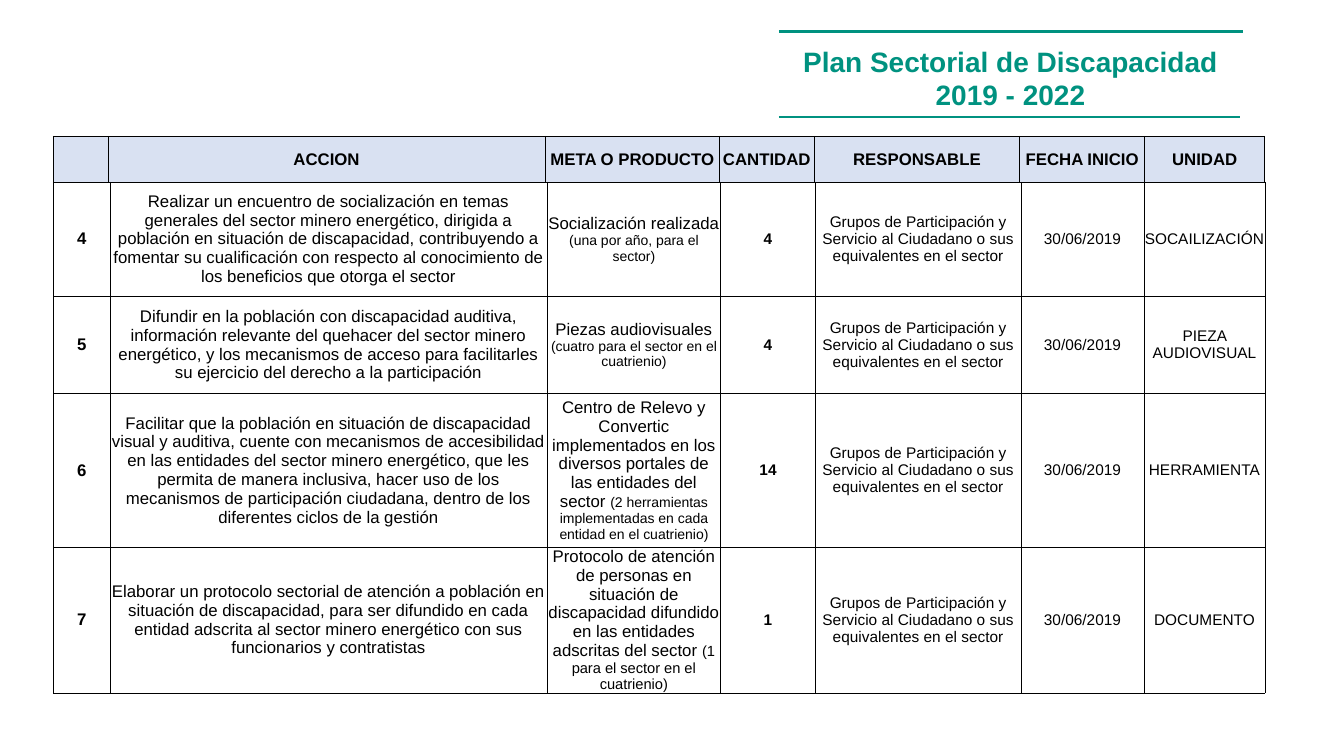
from lxml import etree
from pptx import Presentation
from pptx import util as u
from pptx.dml.color import RGBColor
from pptx.enum import shapes, text
from pptx.oxml import ns

BLACK, GREEN, HEADER_FILL = "000000", "009280", "D9E1F2"
RESPONSIBLE = ("Grupos de Participación y Servicio al Ciudadano o sus "
               "equivalentes en el sector")
START_DATE = "30/06/2019"
HEADINGS = ["", "ACCION", "META O PRODUCTO", "CANTIDAD", "RESPONSABLE",
            "FECHA INICIO", "UNIDAD"]
HEADER_WIDTHS = [1.37, 11.02, 4.39, 2.39, 5.18, 3.15, 3.02]
BODY_WIDTHS = [1.42, 11.02, 4.37, 2.39, 5.18, 3.1, 3.05]
BODY_HEIGHTS = [2.87, 2.46, 3.86, 3.68]

ACTIONS = [
    ("4", "Realizar un encuentro de socialización en temas generales del sector "
          "minero energético, dirigida a población en situación de discapacidad, "
          "contribuyendo a fomentar su cualificación con respecto al conocimiento "
          "de los beneficios que otorga el sector",
     [[("Socialización realizada", 12)], [("(una por año, para el sector)", 10)]],
     "4", "SOCAILIZACIÓN"),
    ("5", "Difundir en la población con discapacidad auditiva, información "
          "relevante del quehacer del sector minero energético, y los mecanismos "
          "de acceso para facilitarles su ejercicio del derecho a la participación",
     [[("Piezas audiovisuales", 12)],
      [("(cuatro para el sector en el cuatrienio)", 10)]],
     "4", "PIEZA AUDIOVISUAL"),
    ("6", "Facilitar que la población en situación de discapacidad visual y "
          "auditiva, cuente con mecanismos de accesibilidad en las entidades del "
          "sector minero energético, que les permita de manera inclusiva, hacer "
          "uso de los mecanismos de participación ciudadana, dentro de los "
          "diferentes ciclos de la gestión",
     [[("Centro de Relevo y Convertic implementados en los diversos portales de "
        "las entidades del sector ", 12),
       ("(2 herramientas implementadas en cada entidad en el cuatrienio)", 10)]],
     "14", "HERRAMIENTA"),
    ("7", "Elaborar un protocolo sectorial de atención a población en situación "
          "de discapacidad, para ser difundido en cada entidad adscrita al sector "
          "minero energético con sus funcionarios y contratistas",
     [[("Protocolo de atención de personas en situación de discapacidad "
        "difundido en las entidades adscritas del sector ", 12),
       ("(1 para el sector en el cuatrienio)", 10.5)]],
     "1", "DOCUMENTO"),
]


def color(code):
    return RGBColor.from_string(code)


def line_of(content, size, bold=False):
    return [[(content, size, bold)]]


class PlanSlide:
    """Holds the slide and its style, and adds each kind of element."""

    font = "Arial"

    def __init__(self, deck):
        self.slide = deck.slides.add_slide(deck.slide_layouts[5])

    def add_text(self, frame, paragraphs, ink):
        for index, pieces in enumerate(paragraphs):
            paragraph = frame.paragraphs[0] if index == 0 else frame.add_paragraph()
            paragraph.alignment = text.PP_ALIGN.CENTER
            for content, size, bold in pieces:
                run = paragraph.add_run()
                run.text = content
                run.font.name, run.font.size, run.font.bold = self.font, u.Pt(size), bold
                run.font.color.rgb = color(ink)

    def title(self, lines, left, top, width, height):
        heading = self.slide.shapes.title
        heading.left, heading.top = u.Cm(left), u.Cm(top)
        heading.width, heading.height = u.Cm(width), u.Cm(height)
        frame = heading.text_frame
        frame.word_wrap = False
        frame.auto_size = text.MSO_AUTO_SIZE.NONE
        frame.vertical_anchor = text.MSO_ANCHOR.TOP
        self.add_text(frame, [[(line, 20, True)] for line in lines], GREEN)

    def rule(self, left, right, y):
        rule = self.slide.shapes.add_connector(
            shapes.MSO_CONNECTOR.STRAIGHT, u.Cm(left), u.Cm(y), u.Cm(right), u.Cm(y))
        rule.line.color.rgb = color(GREEN)
        rule.line.width = u.Pt(2)
        etree.SubElement(rule.element.spPr, ns.qn("a:effectLst"))

    def border(self, cell, side, points):
        properties = cell._tc.get_or_add_tcPr()
        edge = etree.SubElement(properties, ns.qn(f"a:ln{side}"), w=str(u.Pt(points)))
        fill = etree.SubElement(edge, ns.qn("a:solidFill"))
        etree.SubElement(fill, ns.qn("a:srgbClr"), val=BLACK)

    def table(self, rows, left, top, widths, heights, fill=None, heavy=()):
        table = self.slide.shapes.add_table(
            len(rows), len(widths), u.Cm(left), u.Cm(top),
            u.Cm(sum(widths)), u.Cm(sum(heights))).table
        table.first_row = fill is not None
        table.horz_banding = False
        for column, width in zip(table.columns, widths):
            column.width = u.Cm(width)
        for row, height, contents in zip(table.rows, heights, rows):
            row.height = u.Cm(height)
            for index, (cell, paragraphs) in enumerate(zip(row.cells, contents)):
                cell.margin_left = cell.margin_right = 0
                cell.margin_top = cell.margin_bottom = 0
                cell.vertical_anchor = text.MSO_ANCHOR.MIDDLE
                for side in "LRTB":
                    thick = side in heavy and (side != "L" or index == 0)
                    self.border(cell, side, 1 if thick else 0.5)
                if fill:
                    cell.fill.solid()
                    cell.fill.fore_color.rgb = color(fill)
                else:
                    cell.fill.background()
                self.add_text(cell.text_frame, paragraphs, BLACK)


def main():
    deck = Presentation()
    deck.slide_width, deck.slide_height = u.Cm(33.87), u.Cm(19.05)
    plan = PlanSlide(deck)

    header = [line_of(name, 12, True) if name else [] for name in HEADINGS]
    plan.table([header], 1.35, 3.44, HEADER_WIDTHS, [1.15], HEADER_FILL, "LT")

    body = []
    for number, action, goal, quantity, unit in ACTIONS:
        product = [[(content, size, False) for content, size in pieces]
                   for pieces in goal]
        body.append([line_of(number, 12, True), line_of(action, 12), product,
                     line_of(quantity, 11, True), line_of(RESPONSIBLE, 11),
                     line_of(START_DATE, 11), line_of(unit, 11)])
    plan.table(body, 1.35, 4.59, BODY_WIDTHS, BODY_HEIGHTS)

    plan.rule(19.63, 31.24, 2.95)
    plan.rule(19.63, 31.32, 0.79)
    plan.title(["Plan Sectorial de Discapacidad", "2019 - 2022"],
               19.94, 0.99, 11.05, 1.96)
    deck.save("out.pptx")


if __name__ == "__main__":
    main()
